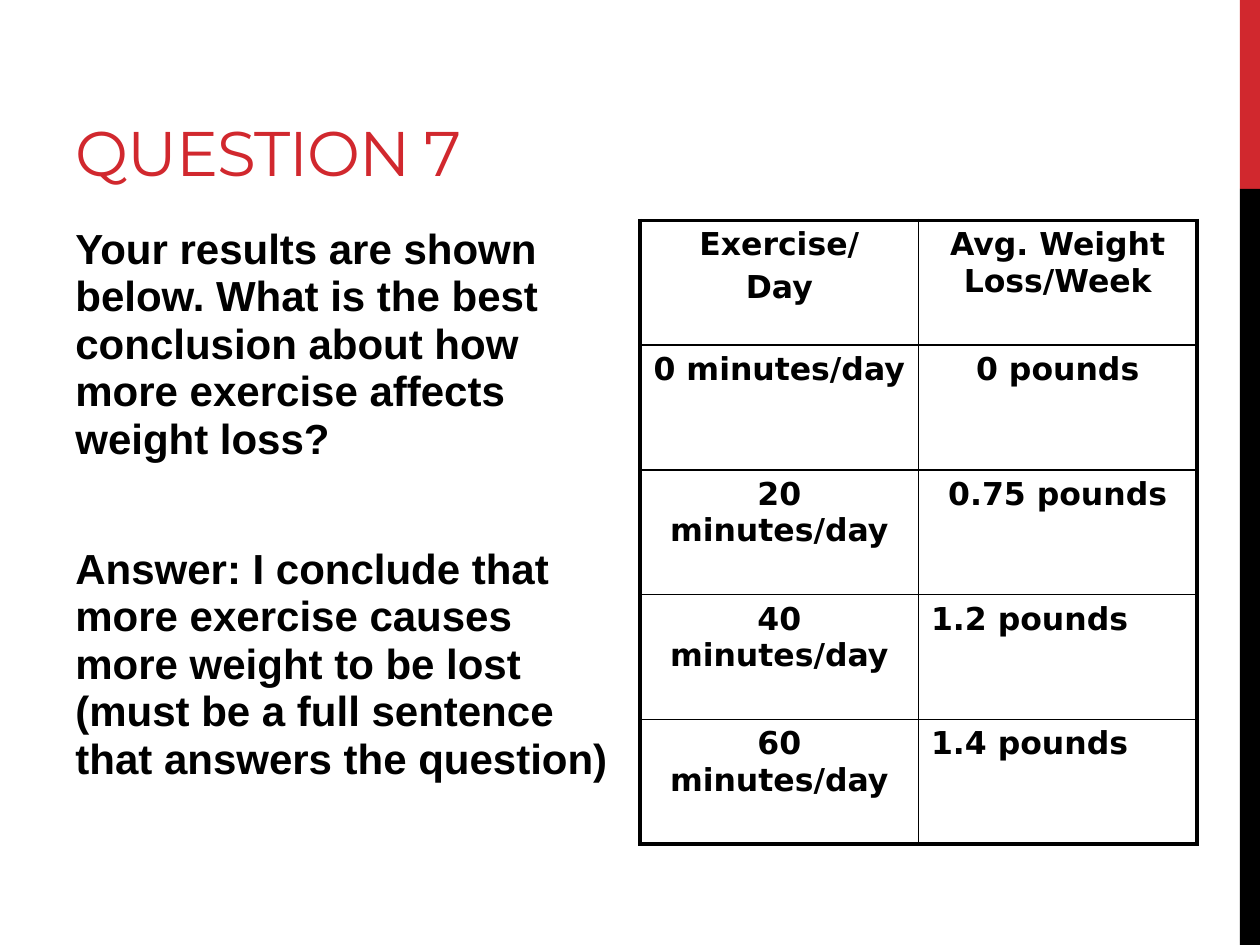
from lxml.etree import SubElement
from pptx import Presentation
from pptx.dml.color import RGBColor
from pptx.enum.shapes import MSO_SHAPE
from pptx.enum.text import MSO_ANCHOR, PP_ALIGN
from pptx.oxml.ns import qn
from pptx.util import Inches, Pt

RED = RGBColor(0xD1, 0x28, 0x2E)
BLACK = RGBColor(0, 0, 0)
THIN, THICK = Pt(1), Pt(2.25)

PARAGRAPHS = [
    "Your results are shown below. What is the best conclusion about how "
    "more exercise affects weight loss?",
    "Answer: I conclude that more exercise causes more weight to be lost "
    "(must be a full sentence that answers the question)",
]
RESULTS = [
    ("Exercise/\nDay", "Avg. Weight Loss/Week"),
    ("0 minutes/day", "0 pounds"),
    ("20 minutes/day", "0.75 pounds"),
    ("40 minutes/day", "1.2 pounds"),
    ("60 minutes/day", "1.4 pounds"),
]
LEFT_ALIGNED = {(3, 1), (4, 1)}


class SlideBuilder:
    title_font, body_font, table_font = "Montserrat", "Arial", "DejaVu Sans"

    def __init__(self, slide):
        self.slide = slide

    def bar(self, top, height, color):
        shape = self.slide.shapes.add_shape(
            MSO_SHAPE.RECTANGLE, Inches(9.84), Inches(top), Inches(0.16), Inches(height))
        shape.shadow.inherit = False
        shape.fill.solid()
        shape.fill.fore_color.rgb = color
        shape.line.fill.background()

    def style(self, para, name, size, color, bold=False):
        for span in para.runs:
            span.font.name = name
            span.font.size = Pt(size)
            span.font.color.rgb = color
            span.font.bold = bold

    def text_frame(self, left, top, width, height):
        box = self.slide.shapes.add_textbox(
            Inches(left), Inches(top), Inches(width), Inches(height))
        box.text_frame.word_wrap = True
        return box.text_frame

    def title(self, text):
        frame = self.text_frame(0.5, 0.3, 9, 1.25)
        frame.vertical_anchor = MSO_ANCHOR.BOTTOM
        frame.text = text
        para = frame.paragraphs[0]
        self.style(para, self.title_font, 36, RED)
        para.runs[0].font._element.set("spc", "-60")

    def body(self, texts):
        frame = self.text_frame(0.5, 1.75, 4.42, 4.95)
        frame.text = "\n".join(texts)
        for index, para in enumerate(frame.paragraphs):
            para.line_spacing = 0.94
            para.space_after = Pt(6)
            if index:
                para.space_before = Pt(41.5)
            self.style(para, self.body_font, 24, BLACK, bold=True)

    def border(self, cell, side, width):
        line = SubElement(cell._tc.get_or_add_tcPr(), qn(f"a:ln{side}"), w=str(width))
        fill = SubElement(line, qn("a:solidFill"))
        SubElement(fill, qn("a:srgbClr"), val=str(BLACK))

    def table(self, rows):
        """Draw a grid with thin inner lines and a thick outline."""
        last_row, last_column = len(rows) - 1, len(rows[0]) - 1
        table = self.slide.shapes.add_table(
            len(rows), len(rows[0]),
            Inches(5.08), Inches(1.75), Inches(4.42), Inches(4.95)).table
        for row, values in enumerate(rows):
            for column, value in enumerate(values):
                cell = table.cell(row, column)
                outer_sides = {"L": column == 0, "R": column == last_column,
                               "T": row == 0, "B": row == last_row}
                for side, outer in outer_sides.items():
                    self.border(cell, side, THICK if outer else THIN)
                cell.fill.background()
                cell.text_frame.text = value
                centred = (row, column) not in LEFT_ALIGNED
                for index, para in enumerate(cell.text_frame.paragraphs):
                    para.alignment = PP_ALIGN.CENTER if centred else PP_ALIGN.LEFT
                    if index:
                        para.space_before = Pt(3.6)
                    self.style(para, self.table_font, 18, BLACK, bold=True)


def main():
    deck = Presentation()
    deck.slide_width, deck.slide_height = Inches(10), Inches(7.5)
    page = SlideBuilder(deck.slides.add_slide(deck.slide_layouts[6]))
    page.bar(0, 1.5, RED)
    page.bar(1.5, 6, BLACK)
    page.title("QUESTION 7")
    page.body(PARAGRAPHS)
    page.table(RESULTS)
    deck.save("out.pptx")


if __name__ == "__main__":
    main()
